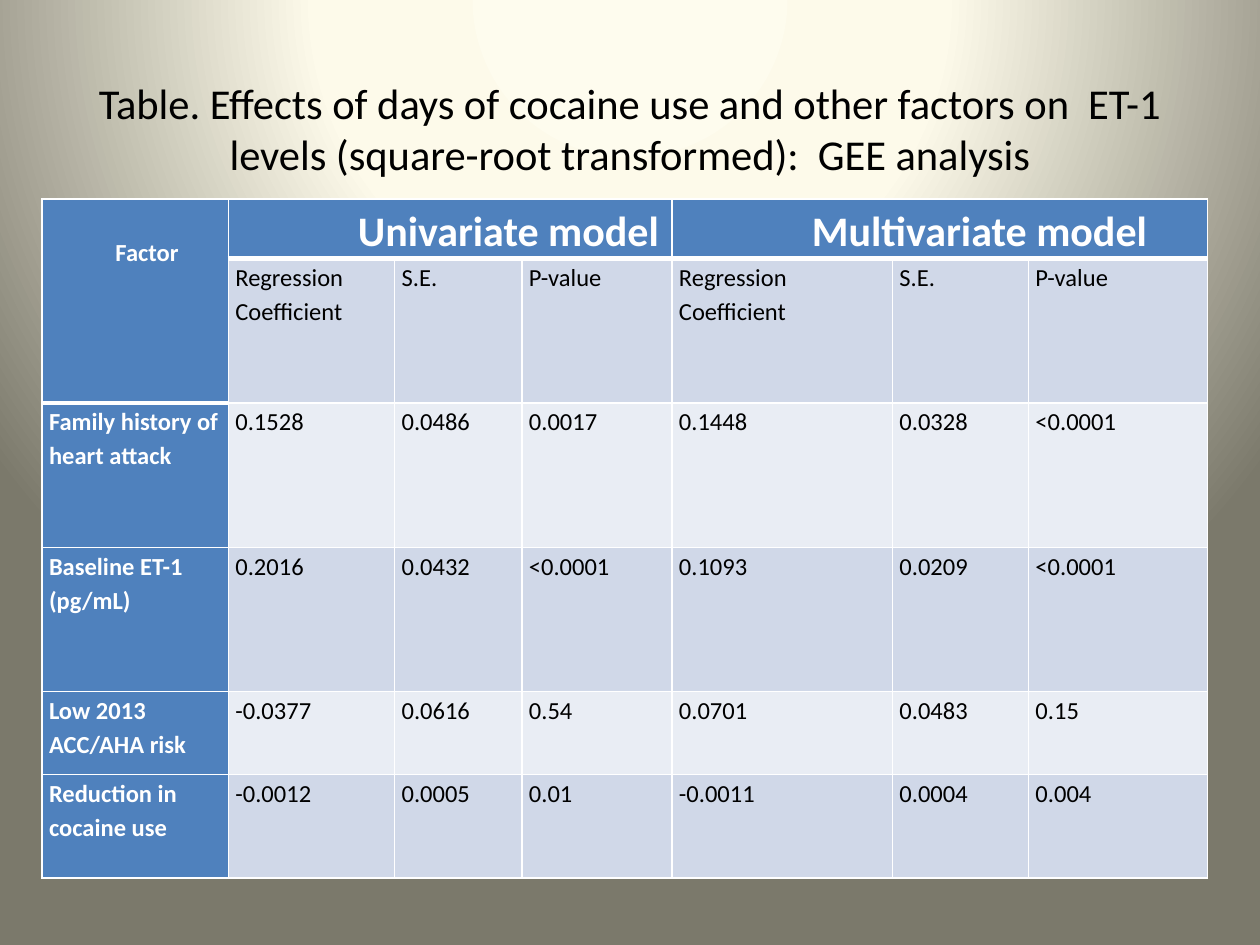
import pptx
import pptx.dml.color
import pptx.enum.text
import pptx.oxml
import pptx.oxml.ns
import pptx.util

Pt = pptx.util.Pt

COLORS = {
    "header": "4F81BD",
    "dark_band": "D0D8E8",
    "light_band": "E9EDF4",
    "white": "FFFFFF",
    "black": "000000",
}
BACKGROUND_STOPS = [(0, "FEFCEE"), (40, "FDFAEA"), (100, "7B796B")]
FONT = "Calibri"

COLUMN_WIDTHS = [106.5, 95, 72.75, 85.75, 126, 77.75, 102.25]
ROW_HEIGHTS = [34, 82.5, 82.5, 82.5, 47.5, 59]
BODY_ROWS = [
    ["", "Regression Coefficient", "S.E.", "P-value",
     "Regression\nCoefficient", "S.E.", "P-value"],
    ["Family history of heart attack", "0.1528", "0.0486", "0.0017",
     "0.1448", "0.0328", "<0.0001"],
    ["Baseline ET-1 (pg/mL)", "0.2016", "0.0432", "<0.0001",
     "0.1093", "0.0209", "<0.0001"],
    ["Low 2013 ACC/AHA risk", "-0.0377", "0.0616", "0.54",
     "0.0701", "0.0483", "0.15"],
    ["Reduction in cocaine use", "-0.0012", "0.0005", "0.01",
     "-0.0011", "0.0004", "0.004"],
]


def rgb(name):
    return pptx.dml.color.RGBColor.from_string(COLORS[name])


def set_background(slide):
    stops = "".join(
        f'<a:gs pos="{position * 1000}"><a:srgbClr val="{color}"/></a:gs>'
        for position, color in BACKGROUND_STOPS)
    background = pptx.oxml.parse_xml(
        f'<p:bg {pptx.oxml.ns.nsdecls("p", "a")}><p:bgPr><a:gradFill>'
        f'<a:gsLst>{stops}</a:gsLst><a:path path="circle">'
        '<a:fillToRect l="50000" t="-80000" r="50000" b="180000"/></a:path>'
        '</a:gradFill><a:effectLst/></p:bgPr></p:bg>')
    slide.element.cSld.insert(0, background)


def set_title(slide, text):
    title = slide.shapes.title
    title.left, title.top, title.width, title.height = Pt(36), Pt(21.6), Pt(648), Pt(90)
    frame = title.text_frame
    frame.text = text
    frame.margin_top = Pt(17)
    frame.vertical_anchor = pptx.enum.text.MSO_ANCHOR.MIDDLE
    paragraph = frame.paragraphs[0]
    paragraph.alignment = pptx.enum.text.PP_ALIGN.CENTER
    paragraph.font.name = FONT
    paragraph.font.size = Pt(24.3)
    paragraph.font.color.rgb = rgb("black")


def set_borders(cell, bottom_width=1):
    properties = cell._tc.get_or_add_tcPr()
    for side, width in (("L", 1), ("R", 1), ("T", 1), ("B", bottom_width)):
        properties.append(pptx.oxml.parse_xml(
            f'<a:ln{side} {pptx.oxml.ns.nsdecls("a")} w="{Pt(width)}"><a:solidFill>'
            f'<a:srgbClr val="{COLORS["white"]}"/></a:solidFill></a:ln{side}>'))


def format_cell(cell, fill, bottom_width=1):
    set_borders(cell, bottom_width)
    cell.fill.solid()
    cell.fill.fore_color.rgb = rgb(fill)


def write_cell(cell, text, color="black", size=14, indent=0, top=0):
    cell.text = text
    cell.margin_left, cell.margin_right = Pt(4 + indent), Pt(4)
    cell.margin_top, cell.margin_bottom = Pt(top), Pt(0)
    for paragraph in cell.text_frame.paragraphs:
        paragraph.line_spacing = 1.15
        paragraph.font.name = FONT
        paragraph.font.size = Pt(size)
        paragraph.font.bold = color == "white"
        paragraph.font.color.rgb = rgb(color)


def add_factor_table(slide):
    frame = slide.shapes.add_table(
        len(ROW_HEIGHTS), len(COLUMN_WIDTHS), Pt(24), Pt(113.75),
        Pt(sum(COLUMN_WIDTHS)), Pt(sum(ROW_HEIGHTS)))
    table = frame.table
    for column, width in zip(table.columns, COLUMN_WIDTHS):
        column.width = Pt(width)
    for row, height in zip(table.rows, ROW_HEIGHTS):
        row.height = Pt(height)

    # Header row and the factor column head, which spans two rows
    for column in range(len(COLUMN_WIDTHS)):
        format_cell(table.cell(0, column), "header", 3)
    table.cell(0, 0).merge(table.cell(1, 0))
    table.cell(0, 1).merge(table.cell(0, 3))
    table.cell(0, 4).merge(table.cell(0, 6))
    write_cell(table.cell(0, 0), "Factor", "white", indent=38, top=20)
    write_cell(table.cell(0, 1), "Univariate model", "white", 24, indent=70)
    write_cell(table.cell(0, 4), "Multivariate model", "white", 24, indent=76)

    # Banded body with a coloured first column
    for row, texts in enumerate(BODY_ROWS, start=1):
        band = "dark_band" if row % 2 else "light_band"
        for column, text in enumerate(texts):
            cell = table.cell(row, column)
            is_factor = column == 0
            format_cell(cell, "header" if is_factor else band,
                        3 if is_factor and row == 1 else 1)
            if text:
                write_cell(cell, text, "white" if is_factor else "black")


def main():
    presentation = pptx.Presentation()
    presentation.slide_width, presentation.slide_height = Pt(720), Pt(540)
    slide = presentation.slides.add_slide(presentation.slide_layouts[5])
    set_background(slide)
    set_title(slide, "Table. Effects of days of cocaine use and other factors on  ET-1 "
                     "levels (square-root transformed):  GEE analysis")
    add_factor_table(slide)
    presentation.save("out.pptx")


if __name__ == "__main__":
    main()
